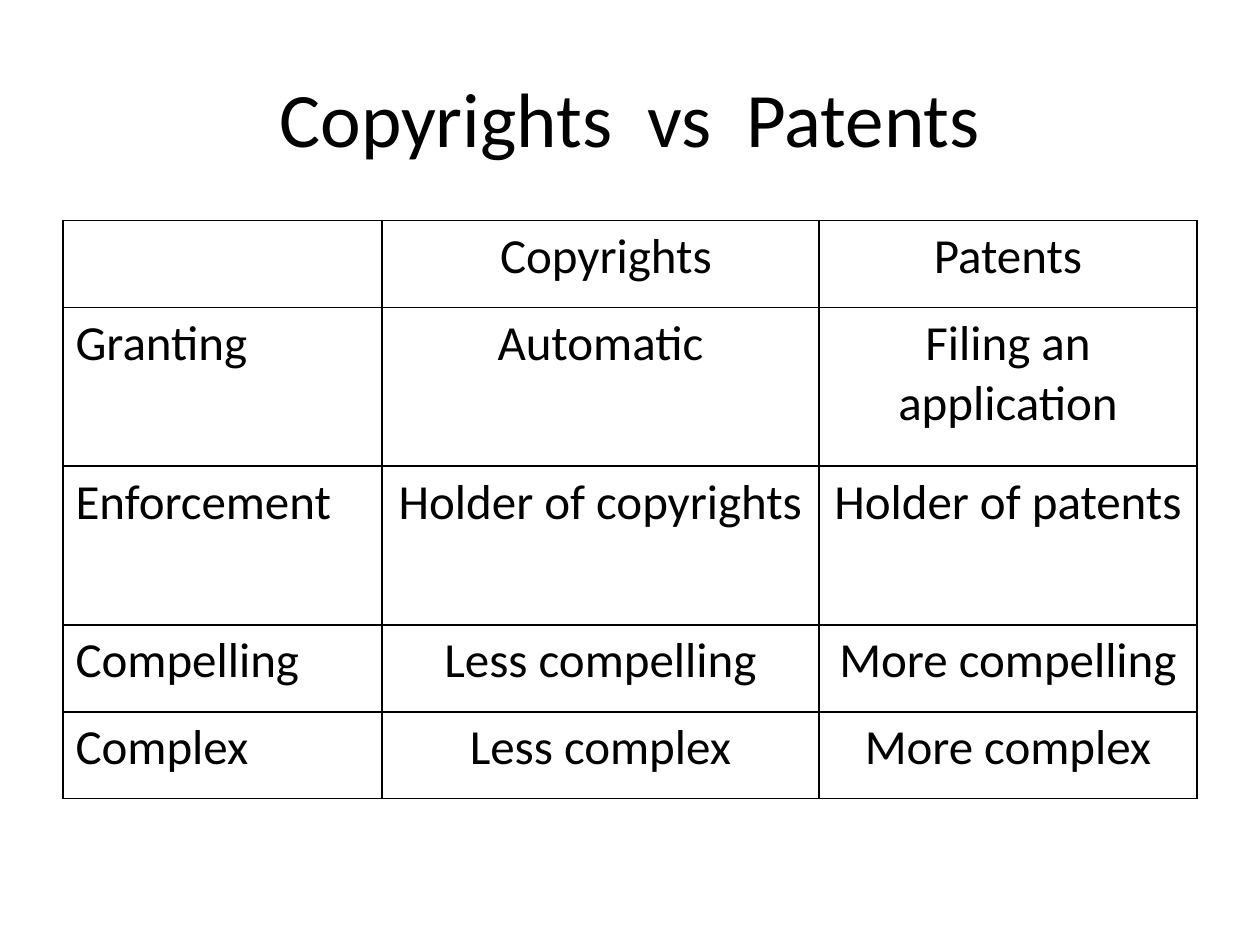
from dataclasses import dataclass

from lxml.etree import SubElement
from pptx import Presentation
from pptx.dml.color import RGBColor
from pptx.enum.text import MSO_ANCHOR, PP_ALIGN
from pptx.oxml.ns import qn
from pptx.slide import Slide
from pptx.table import _Cell
from pptx.text.text import _Paragraph
from pptx.util import Inches, Pt


@dataclass(frozen=True)
class Theme:
    font: str = "Calibri"
    ink: str = "000000"
    paper: str = "FFFFFF"
    title_size: int = 44
    body_size: int = 28
    border_width: int = 1


@dataclass(frozen=True)
class Comparison:
    aspect: str
    copyrights: str
    patents: str
    height: float


THEME = Theme()
LEFT, CONTENT_WIDTH = 0.5, 9
COLUMN_WIDTHS = (2.53, 3.47, 3)
SHORT_ROW, TALL_ROW = 0.69, 1.26
COMPARISONS = (
    Comparison("", " Copyrights", "Patents", SHORT_ROW),
    Comparison("Granting", "Automatic", "Filing an application", TALL_ROW),
    Comparison("Enforcement", "Holder of copyrights", "Holder of patents ", TALL_ROW),
    Comparison("Compelling", "Less compelling", "More compelling", SHORT_ROW),
    Comparison("Complex", "Less complex", "More complex", SHORT_ROW),
)


def write(paragraph: _Paragraph, text: str, size: int, alignment: PP_ALIGN) -> None:
    paragraph.alignment = alignment
    run = paragraph.add_run()
    run.text = text
    run.font.name = THEME.font
    run.font.size = Pt(size)
    run.font.bold = False
    run.font.color.rgb = RGBColor.from_string(THEME.ink)


def add_title(slide: Slide, text: str) -> None:
    title = slide.shapes.add_textbox(
        Inches(LEFT), Inches(0.3), Inches(CONTENT_WIDTH), Inches(1.25)
    )
    frame = title.text_frame
    frame.word_wrap = True
    frame.vertical_anchor = MSO_ANCHOR.MIDDLE
    write(frame.paragraphs[0], text, THEME.title_size, PP_ALIGN.CENTER)


def style_cell(cell: _Cell) -> None:
    properties = cell._tc.get_or_add_tcPr()
    for side in ("a:lnL", "a:lnR", "a:lnT", "a:lnB"):
        line = SubElement(properties, qn(side), w=str(Pt(THEME.border_width)))
        fill = SubElement(line, qn("a:solidFill"))
        SubElement(fill, qn("a:srgbClr"), val=THEME.ink)
    cell.fill.solid()
    cell.fill.fore_color.rgb = RGBColor.from_string(THEME.paper)


def add_comparison_table(slide: Slide, comparisons: tuple[Comparison, ...]) -> None:
    height = sum(comparison.height for comparison in comparisons)
    table = slide.shapes.add_table(
        len(comparisons), len(COLUMN_WIDTHS),
        Inches(LEFT), Inches(1.75), Inches(CONTENT_WIDTH), Inches(height),
    ).table
    table.first_row = False
    table.horz_banding = False
    for column, width in zip(table.columns, COLUMN_WIDTHS):
        column.width = Inches(width)
    for row, comparison in zip(table.rows, comparisons):
        row.height = Inches(comparison.height)
        texts = (comparison.aspect, comparison.copyrights, comparison.patents)
        for index, (cell, text) in enumerate(zip(row.cells, texts)):
            style_cell(cell)
            if text:
                alignment = PP_ALIGN.CENTER if index else PP_ALIGN.LEFT
                write(cell.text_frame.paragraphs[0], text, THEME.body_size, alignment)


def main() -> None:
    presentation = Presentation()
    presentation.slide_width = Inches(10)
    presentation.slide_height = Inches(7.5)
    slide = presentation.slides.add_slide(presentation.slide_layouts[6])
    add_title(slide, "Copyrights  vs  Patents")
    add_comparison_table(slide, COMPARISONS)
    presentation.save("out.pptx")


if __name__ == "__main__":
    main()
